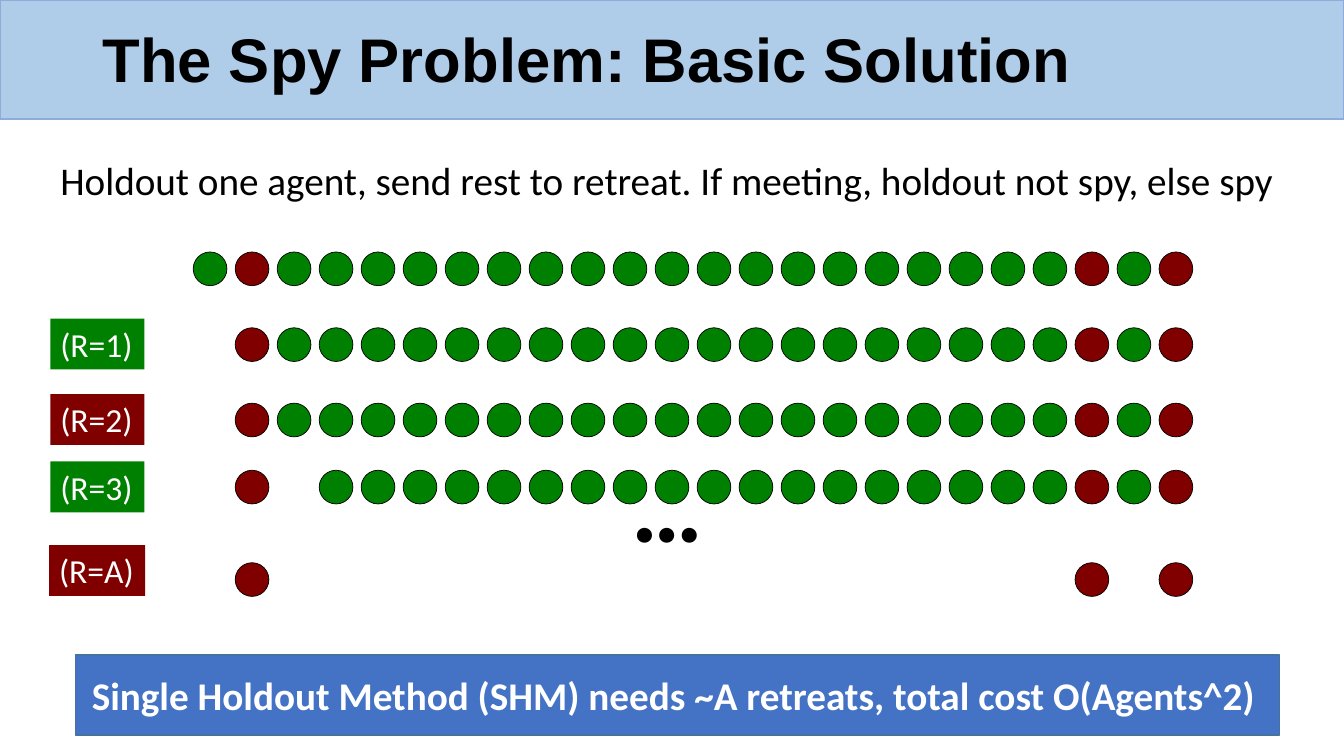
from dataclasses import dataclass

from pptx import Presentation
from pptx.dml.color import RGBColor
from pptx.enum.shapes import MSO_SHAPE
from pptx.enum.text import MSO_ANCHOR, MSO_AUTO_SIZE, PP_ALIGN
from pptx.shapes.autoshape import Shape
from pptx.shapes.group import GroupShape
from pptx.slide import Slide
from pptx.util import Cm, Pt


@dataclass(frozen=True)
class Theme:
    black: str = "000000"
    white: str = "FFFFFF"
    green: str = "008000"
    red: str = "800000"
    banner: str = "AFCCE9"
    banner_line: str = "8FAADC"
    summary: str = "4472C4"
    summary_line: str = "43739E"
    title_font: str = "Arial"
    body_font: str = "Calibri"
    title_size: int = 44
    body_size: int = 28
    label_size: int = 24
    ellipsis_size: int = 72


@dataclass(frozen=True)
class Box:
    left: float
    top: float
    width: float
    height: float


@dataclass(frozen=True)
class Retreat:
    label: str
    label_box: Box
    label_color: str
    agents_top: float
    agents: tuple[int, ...]


THEME = Theme()
AGENT_COUNT = 24
SPIES = (1, 21, 23)
AGENT_SIZE = 0.85
FIRST_AGENT_LEFT = 4.87
LAST_AGENT_LEFT = 29.21
AGENT_PITCH = (LAST_AGENT_LEFT - FIRST_AGENT_LEFT) / (AGENT_COUNT - 1)

EVERYONE = tuple(range(AGENT_COUNT))
WITHOUT_FIRST = EVERYONE[1:]
WITHOUT_THIRD = tuple(agent for agent in WITHOUT_FIRST if agent != 2)

RETREATS = (
    Retreat("(R=1)", Box(1.27, 8.03, 2.37, 1.28), THEME.green, 8.26, WITHOUT_FIRST),
    Retreat("(R=2)", Box(1.27, 9.93, 2.37, 1.28), THEME.red, 10.16, WITHOUT_FIRST),
    Retreat("(R=3)", Box(1.27, 11.63, 2.37, 1.28), THEME.green, 11.85, WITHOUT_THIRD),
    Retreat("(R=A)", Box(1.24, 13.74, 2.42, 1.28), THEME.red, 14.18, SPIES),
)


def add_filled_shape(
    parent: Slide | GroupShape, kind: MSO_SHAPE, box: Box, fill: str,
    line: str | None = None, line_width: float = 1,
) -> Shape:
    shape = parent.shapes.add_shape(
        kind, Cm(box.left), Cm(box.top), Cm(box.width), Cm(box.height)
    )
    shape.shadow.inherit = False
    shape.fill.solid()
    shape.fill.fore_color.rgb = RGBColor.from_string(fill)
    if line is None:
        shape.line.fill.background()
    else:
        shape.line.color.rgb = RGBColor.from_string(line)
        shape.line.width = Pt(line_width)
    return shape


def write_text(
    shape: Shape, text: str, size: int, color: str, font: str = THEME.body_font,
    bold: bool = False, align: PP_ALIGN = PP_ALIGN.LEFT,
    anchor: MSO_ANCHOR = MSO_ANCHOR.TOP, wrap: bool = False,
) -> None:
    frame = shape.text_frame
    frame.word_wrap = wrap
    frame.auto_size = MSO_AUTO_SIZE.NONE if wrap else MSO_AUTO_SIZE.SHAPE_TO_FIT_TEXT
    frame.vertical_anchor = anchor
    paragraph = frame.paragraphs[0]
    paragraph.alignment = align
    run = paragraph.add_run()
    run.text = text
    run.font.name = font
    run.font.size = Pt(size)
    run.font.bold = bold
    run.font.color.rgb = RGBColor.from_string(color)


def add_text(slide: Slide, box: Box, text: str, size: int, bold: bool = False) -> None:
    shape = slide.shapes.add_textbox(
        Cm(box.left), Cm(box.top), Cm(box.width), Cm(box.height)
    )
    write_text(shape, text, size, THEME.black, bold=bold)


def add_title(slide: Slide) -> None:
    title = slide.shapes.title
    title.left, title.top = Cm(2.33), Cm(0.58)
    title.width, title.height = Cm(29.21), Cm(1.98)
    write_text(
        title, "The Spy Problem: Basic Solution", THEME.title_size, THEME.black,
        THEME.title_font, bold=True, anchor=MSO_ANCHOR.MIDDLE, wrap=True,
    )
    title.text_frame.paragraphs[0].line_spacing = 0.9
    banner = add_filled_shape(
        slide, MSO_SHAPE.RECTANGLE, Box(0, 0.02, 33.87, 2.98),
        THEME.banner, THEME.banner_line,
    )
    title.element.addprevious(banner.element)


def add_agents(parent: Slide | GroupShape, top: float, agents: tuple[int, ...]) -> None:
    for agent in agents:
        left = FIRST_AGENT_LEFT + agent * AGENT_PITCH
        color = THEME.red if agent in SPIES else THEME.green
        add_filled_shape(
            parent, MSO_SHAPE.OVAL, Box(left, top, AGENT_SIZE, AGENT_SIZE),
            color, THEME.black, 0.5,
        )


def add_retreat(slide: Slide, retreat: Retreat) -> None:
    group = slide.shapes.add_group_shape()
    add_agents(group, retreat.agents_top, retreat.agents)
    label = add_filled_shape(
        group, MSO_SHAPE.RECTANGLE, retreat.label_box, retreat.label_color
    )
    write_text(label, retreat.label, THEME.label_size, THEME.white)


def add_summary(slide: Slide) -> None:
    summary = add_filled_shape(
        slide, MSO_SHAPE.RECTANGLE, Box(1.91, 16.51, 30.33, 2.01),
        THEME.summary, THEME.summary_line,
    )
    write_text(
        summary,
        "Single Holdout Method (SHM) needs ~A retreats, total cost O(Agents^2) ",
        THEME.body_size, THEME.white, bold=True, align=PP_ALIGN.CENTER,
        anchor=MSO_ANCHOR.MIDDLE, wrap=True,
    )


def main() -> None:
    presentation = Presentation()
    presentation.slide_width, presentation.slide_height = Cm(33.87), Cm(19.05)
    slide = presentation.slides.add_slide(presentation.slide_layouts[5])
    add_title(slide)
    add_summary(slide)
    add_text(
        slide, Box(1.27, 3.81, 31.62, 1.45),
        "Holdout one agent, send rest to retreat. If meeting, holdout not spy, else spy",
        THEME.body_size,
    )
    add_agents(slide, 6.35, EVERYONE)
    for retreat in RETREATS:
        add_retreat(slide, retreat)
    add_text(slide, Box(15.67, 11, 2.64, 3.33), "…", THEME.ellipsis_size, bold=True)
    presentation.save("out.pptx")


if __name__ == "__main__":
    main()
